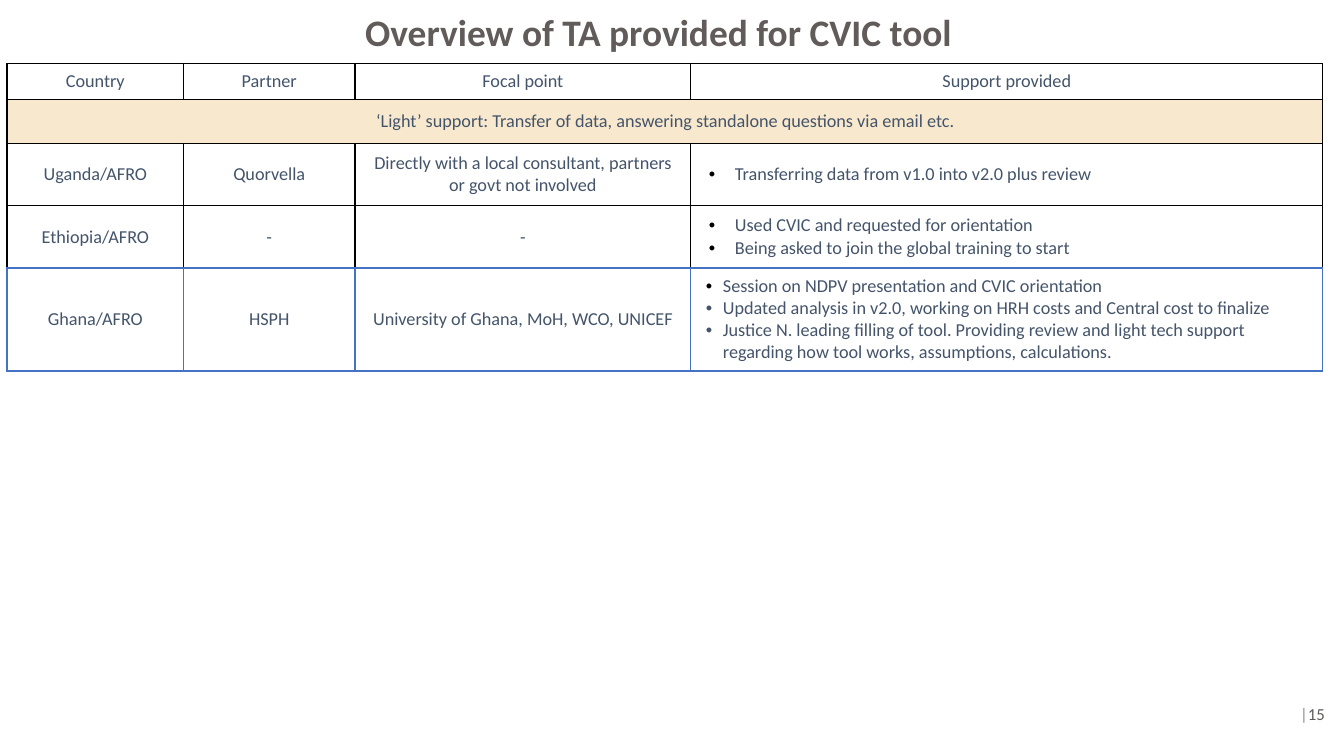
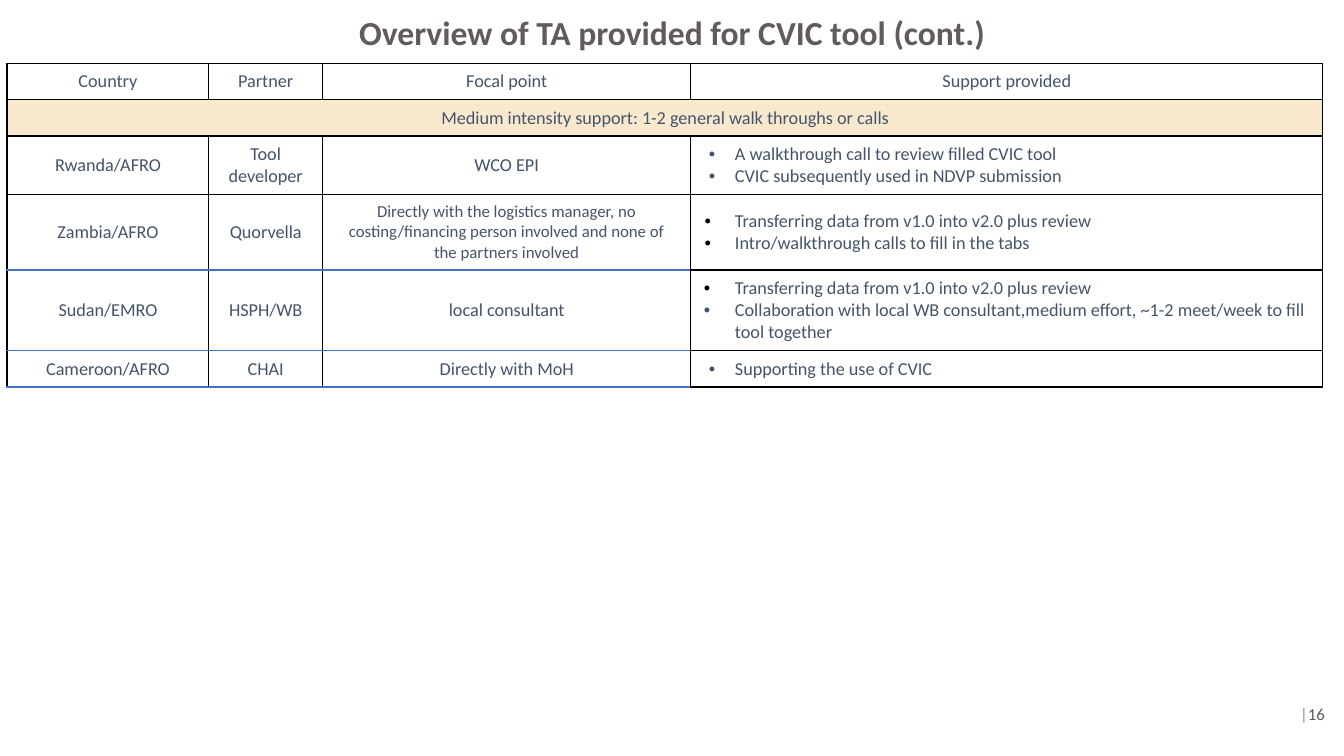
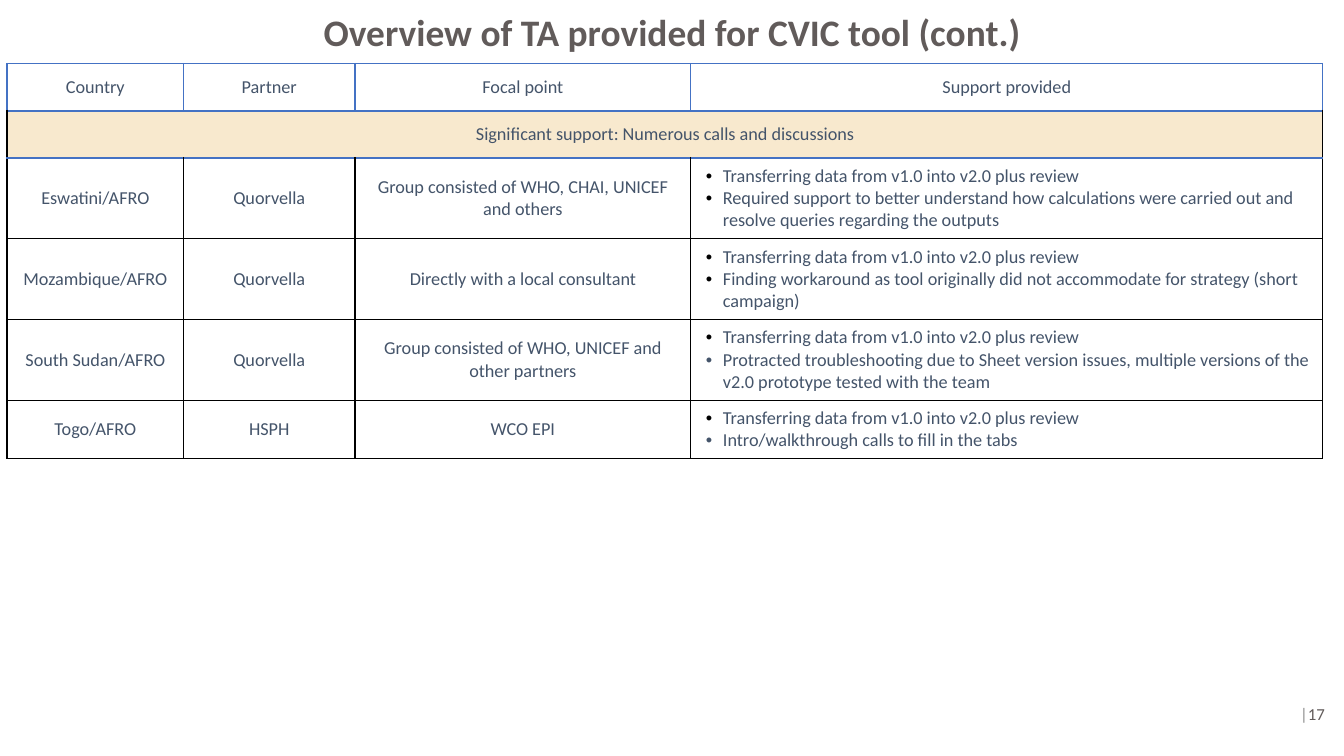
from dataclasses import dataclass, field

from lxml.etree import SubElement
from pptx import Presentation
from pptx.dml.color import RGBColor
from pptx.enum.text import MSO_ANCHOR as Anchor, MSO_AUTO_SIZE as AutoSize, PP_ALIGN as Align
from pptx.oxml.ns import qn
from pptx.util import Inches, Pt

# Shared look
WIDTH, HEIGHT = 13.33, 7.5
FONT = "Calibri"
COLORS = {
    "title": "615B5A", "text": "44546A", "bar": "8C8C8C",
    "band": "DF930A", "line": "000000", "accent": "4472C4",
}
BAND_OPACITY = 20
TABLE_LEFT, TABLE_TOP = 0.07, 0.63
WIDE_COLUMNS = [1.75, 1.7, 3.33, 6.27]
NARROW_COLUMNS = [2, 1.13, 3.65, 6.27]
HEADINGS = ["Country", "Partner", "Focal point", "Support provided"]
TRANSFER = "Transferring data from v1.0 into v2.0 plus review"
WALKTHROUGH = "Intro/walkthrough calls to fill in the tabs"
TIGHT = (0.19, 0.17)  # text margin, hanging indent


@dataclass
class Support:
    height: float
    country: str
    partner: str
    focal: str
    bullets: list
    black_bullets: int = 0
    indent: tuple = (0.31, 0.26)
    focal_size: float = 13


@dataclass
class Overview:
    number: int
    title: str
    title_box: tuple  # left, width
    title_size: float
    columns: list
    band: str
    top_heights: tuple  # heading row, band row
    rows: list
    accent_rules: dict = field(default_factory=dict)  # rule: (points, columns)
    accent_row: int = -1  # row with accent side lines


OVERVIEWS = [
    Overview(
        15, "Overview of TA provided for CVIC tool", (3.4, 6.27), 26.7, WIDE_COLUMNS,
        "‘Light’ support: Transfer of data, answering standalone questions via email etc.",
        (0.36, 0.43),
        [
            Support(0.62, "Uganda/AFRO", "Quorvella",
                    "Directly with a local consultant, partners or govt not involved",
                    [TRANSFER], 1),
            Support(0.62, "Ethiopia/AFRO", "-", "-",
                    ["Used CVIC and requested for orientation",
                     "Being asked to join the global training to start"], 2),
            Support(1.02, "Ghana/AFRO", "HSPH", "University of Ghana, MoH, WCO, UNICEF",
                    ["Session on NDPV presentation and CVIC orientation",
                     "Updated analysis in v2.0, working on HRH costs and Central cost to finalize",
                     "Justice N. leading filling of tool. Providing review and light tech support "
                     "regarding how tool works, assumptions, calculations."], 1, TIGHT),
        ],
        {4: (1, 4), 5: (2, 4)}, accent_row=4),
    Overview(
        16, "Overview of TA provided for CVIC tool (cont.)", (3.13, 7.07), 24, NARROW_COLUMNS,
        "Medium intensity support: 1-2 general walk throughs or calls",
        (0.36, 0.36),
        [
            Support(0.58, "Rwanda/AFRO", "Tool developer", "WCO EPI",
                    ["A walkthrough call to review filled CVIC tool",
                     "CVIC subsequently used in NDVP submission"]),
            Support(0.74, "Zambia/AFRO", "Quorvella",
                    "Directly with the logistics manager, no costing/financing person involved "
                    "and none of the partners involved",
                    [TRANSFER, WALKTHROUGH], 2, (0.31, 0.3), focal_size=12),
            Support(0.8, "Sudan/EMRO", "HSPH/WB", "local consultant",
                    [TRANSFER,
                     "Collaboration with local WB consultant,medium effort, ~1-2 meet/week "
                     "to fill tool together"], 1, (0.31, 0.32)),
            Support(0.36, "Cameroon/AFRO", "CHAI", "Directly with MoH",
                    ["Supporting the use of CVIC"]),
        ],
        {4: (1, 3), 5: (1, 3), 6: (1, 3)}),
    Overview(
        17, "Overview of TA provided for CVIC tool (cont.)", (2.74, 7.86), 26.7, WIDE_COLUMNS,
        "Significant support: Numerous calls and discussions",
        (0.47, 0.47),
        [
            Support(0.8, "Eswatini/AFRO", "Quorvella",
                    "Group consisted of WHO, CHAI, UNICEF and others",
                    [TRANSFER,
                     "Required support to better understand how calculations were carried out "
                     "and resolve queries regarding the outputs"], 2, TIGHT),
            Support(0.8, "Mozambique/AFRO", "Quorvella", "Directly with a local consultant",
                    [TRANSFER,
                     "Finding workaround as tool originally did not accommodate for strategy "
                     "(short campaign)"], 2, TIGHT),
            Support(0.8, "South Sudan/AFRO", "Quorvella",
                    "Group consisted of WHO, UNICEF and other partners",
                    [TRANSFER,
                     "Protracted troubleshooting due to Sheet version issues, multiple versions "
                     "of the v2.0 prototype tested with the team"], 1, TIGHT),
            Support(0.58, "Togo/AFRO", "HSPH", "WCO EPI", [TRANSFER, WALKTHROUGH], 1, TIGHT),
        ],
        {0: (1, 4), 1: (2, 4), 2: (2, 4)}, accent_row=0),
]


# Text
def add_span(para, text, size=13, color="text", bold=False, align=Align.CENTER):
    para.alignment = align
    span = para.add_run()
    span.text = text
    span.font.name = FONT
    span.font.size = Pt(size)
    span.font.bold = bold
    span.font.color.rgb = RGBColor.from_string(COLORS[color])


def set_frame(frame, vertical_inset):
    frame.word_wrap = True
    frame.auto_size = AutoSize.NONE
    frame.vertical_anchor = Anchor.MIDDLE
    frame.margin_left = frame.margin_right = Inches(0.13)
    frame.margin_top = frame.margin_bottom = Inches(vertical_inset)


def add_bullet(para, color, margin, hanging):
    props = para._p.get_or_add_pPr()
    props.set("marL", str(Inches(margin)))
    props.set("indent", str(-Inches(hanging)))
    SubElement(SubElement(props, qn("a:buClr")), qn("a:srgbClr"), val=COLORS[color])
    SubElement(props, qn("a:buFont"), typeface="Arial")
    SubElement(props, qn("a:buChar"), char="•")


def fill_bullets(frame, support):
    for index, text in enumerate(support.bullets):
        para = frame.add_paragraph() if index else frame.paragraphs[0]
        add_span(para, text, align=Align.LEFT)
        add_bullet(para, "line" if index < support.black_bullets else "text", *support.indent)


# Table
def set_border(cell, side, color, points):
    line = SubElement(cell._tc.get_or_add_tcPr(), qn(f"a:ln{side}"), w=str(Pt(points)))
    SubElement(SubElement(line, qn("a:solidFill")), qn("a:srgbClr"), val=COLORS[color])


def format_cell(cell, row, column, overview):
    cell.vertical_anchor = Anchor.MIDDLE
    cell.margin_left = cell.margin_right = Inches(0.13)
    cell.margin_top = cell.margin_bottom = Inches(0.07)
    side_color = "accent" if row == overview.accent_row else "line"
    for side in "LR":
        set_border(cell, side, side_color, 1)
    for side, rule in (("T", row), ("B", row + 1)):
        points, accent_columns = overview.accent_rules.get(rule, (1, 0))
        set_border(cell, side, "accent" if column < accent_columns else "line", points)
    if row == 1:
        cell.fill.solid()
        cell.fill.fore_color.rgb = RGBColor.from_string(COLORS["band"])
        tint = cell._tc.tcPr.find(qn("a:solidFill")).find(qn("a:srgbClr"))
        SubElement(tint, qn("a:alpha"), val=str(BAND_OPACITY * 1000))
    else:
        cell.fill.background()


def add_support_table(page, overview):
    heights = [*overview.top_heights, *(support.height for support in overview.rows)]
    table = page.shapes.add_table(
        len(heights), len(HEADINGS), Inches(TABLE_LEFT), Inches(TABLE_TOP),
        Inches(sum(overview.columns)), Inches(sum(heights))).table
    table.first_row = table.horz_banding = False
    for column, width in zip(table.columns, overview.columns):
        column.width = Inches(width)
    for row, height in zip(table.rows, heights):
        row.height = Inches(height)
    for row in range(len(heights)):
        for column in range(len(HEADINGS)):
            format_cell(table.cell(row, column), row, column, overview)

    table.cell(1, 0).merge(table.cell(1, len(HEADINGS) - 1))
    add_span(table.cell(1, 0).text_frame.paragraphs[0], overview.band)
    for column, heading in enumerate(HEADINGS):
        add_span(table.cell(0, column).text_frame.paragraphs[0], heading)
    for row, support in enumerate(overview.rows, start=2):
        entries = [(support.country, 13), (support.partner, 13),
                   (support.focal, support.focal_size)]
        for column, (text, size) in enumerate(entries):
            add_span(table.cell(row, column).text_frame.paragraphs[0], text, size=size)
        fill_bullets(table.cell(row, len(entries)).text_frame, support)


# Title and page number
def set_title(page, overview):
    title = page.shapes.title
    left, width = overview.title_box
    title.left, title.top = Inches(left), 0
    title.width, title.height = Inches(width), Inches(TABLE_TOP)
    set_frame(title.text_frame, 0.07)
    add_span(title.text_frame.paragraphs[0], overview.title,
             size=overview.title_size, color="title", bold=True)


def add_page_number(page, number):
    width, height = 0.8, 0.57
    box = page.shapes.add_textbox(
        Inches(WIDTH - width - 0.06), Inches(HEIGHT - height - 0.13),
        Inches(width), Inches(height))
    set_frame(box.text_frame, 0.13)
    para = box.text_frame.paragraphs[0]
    add_span(para, "|", size=12, color="bar", align=Align.RIGHT)
    add_span(para, str(number), size=12, color="title", align=Align.RIGHT)


def main():
    deck = Presentation()
    deck.slide_width, deck.slide_height = Inches(WIDTH), Inches(HEIGHT)
    title_only = deck.slide_layouts[5]
    for overview in OVERVIEWS:
        page = deck.slides.add_slide(title_only)
        set_title(page, overview)
        add_support_table(page, overview)
        add_page_number(page, overview.number)
    deck.save("out.pptx")


if __name__ == "__main__":
    main()
